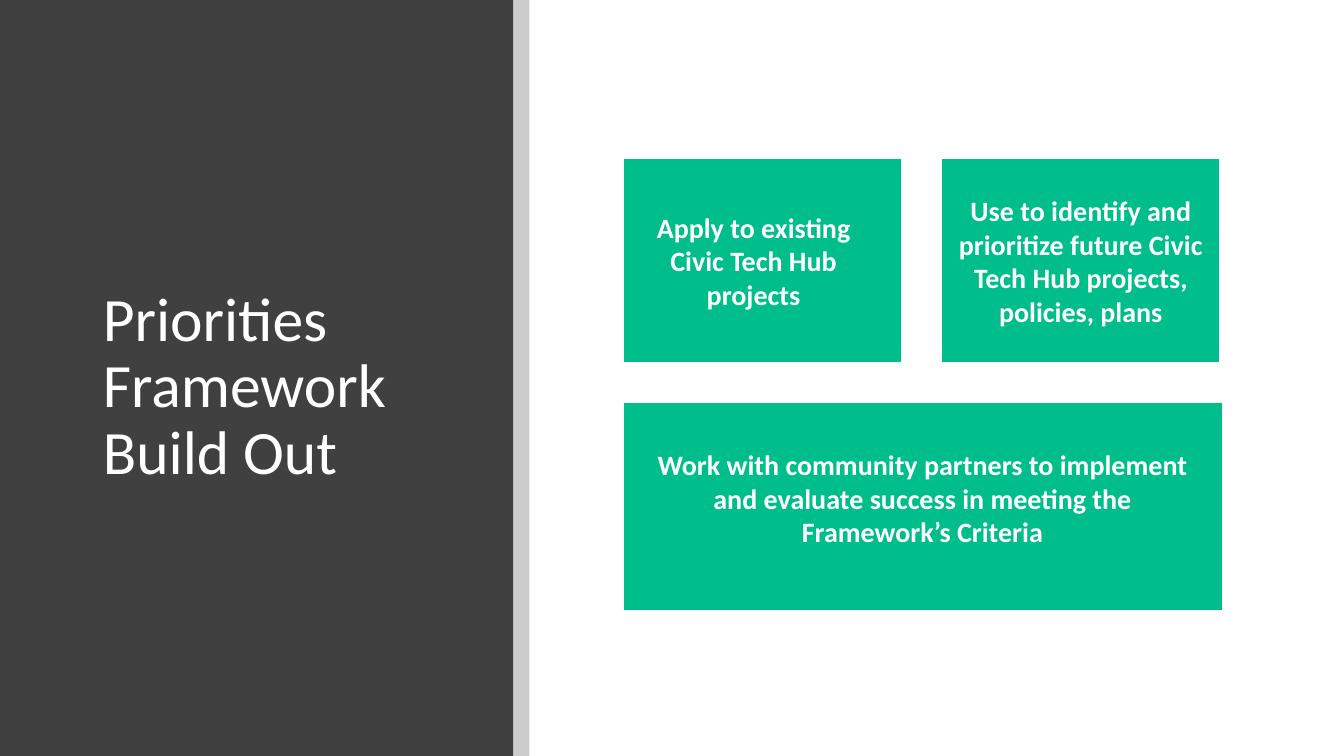
from dataclasses import dataclass
from lxml.etree import SubElement
from pptx import Presentation
from pptx.dml.color import RGBColor
from pptx.enum.shapes import MSO_SHAPE
from pptx.enum.text import MSO_ANCHOR, MSO_AUTO_SIZE, PP_ALIGN
from pptx.oxml.ns import qn
from pptx.util import Inches, Pt

TITLE = "Priorities Framework Build Out"
CARDS = [
    {"text": "Apply to existing Civic Tech Hub projects",
     "frame": (6.18, 1.57, 2.77, 2.03), "label": (6.36, 1.91, 2.23, 1.35)},
    {"text": "Work with community partners to implement and evaluate success "
             "in meeting the Framework’s Criteria",
     "frame": (6.18, 3.99, 5.95, 2.07), "label": (6.4, 3.99, 5.5, 1.9)},
    {"text": "Use to identify and prioritize future Civic Tech Hub projects, policies, plans",
     "frame": (9.33, 1.57, 2.77, 2.03), "label": (9.41, 1.79, 2.62, 1.59)},
]
SLIDE_WIDTH, SLIDE_HEIGHT = 13.33, 7.5
PANEL_WIDTH, STRIPE_WIDTH = 5.09, 0.16
TITLE_BOX = (0.92, 0.89, 3.65, 5.91)


@dataclass(frozen=True)
class Theme:
    """Colours, font and type sizes of the slide."""
    font: str = "Calibri"
    panel: RGBColor = RGBColor(0x40, 0x40, 0x40)
    stripe: RGBColor = RGBColor(0, 0, 0)
    stripe_opacity: int = 20
    card: RGBColor = RGBColor(0x00, 0xBE, 0x8C)
    white: RGBColor = RGBColor(0xFF, 0xFF, 0xFF)
    title_size: int = 44
    card_size: int = 20
    border: float = 1.5
    inset: float = 0.08


THEME = Theme()


def set_all(target, values):
    """Set each named attribute on the target."""
    for name, value in values.items():
        setattr(target, name, value)


def add_rectangle(shapes, box, color):
    """Add a plain filled rectangle."""
    shape = shapes.add_shape(MSO_SHAPE.RECTANGLE, *map(Inches, box))
    shape.shadow.inherit = False
    shape.fill.solid()
    shape.fill.fore_color.rgb = color
    shape.line.fill.background()
    return shape


def write_text(shape, text, size, bold, alignment, spacing):
    """Write one formatted paragraph into a shape."""
    set_all(shape.text_frame, {"text": text, "word_wrap": True,
                               "auto_size": MSO_AUTO_SIZE.NONE,
                               "vertical_anchor": MSO_ANCHOR.MIDDLE})
    paragraph = shape.text_frame.paragraphs[0]
    set_all(paragraph, {"alignment": alignment, "line_spacing": spacing})
    font = paragraph.runs[0].font
    set_all(font, {"name": THEME.font, "size": Pt(size), "bold": bold})
    font.color.rgb = THEME.white


def add_panel(slide):
    """Add the dark side panel and its translucent stripe."""
    add_rectangle(slide.shapes, (0, 0, PANEL_WIDTH, SLIDE_HEIGHT), THEME.panel)
    stripe = add_rectangle(slide.shapes, (PANEL_WIDTH, 0, STRIPE_WIDTH, SLIDE_HEIGHT),
                           THEME.stripe)
    color = stripe.element.spPr.find(qn("a:solidFill")).find(qn("a:srgbClr"))
    SubElement(color, qn("a:alpha")).set("val", str(THEME.stripe_opacity * 1000))


def add_title(slide):
    """Place the title in front of the panel."""
    title = slide.shapes.title
    slide.shapes.element.append(title.element)
    set_all(title, dict(zip(("left", "top", "width", "height"), map(Inches, TITLE_BOX))))
    write_text(title, TITLE, THEME.title_size, False, PP_ALIGN.LEFT, 0.9)


def add_card(slide, card):
    """Add a bordered card grouped with its label."""
    group = slide.shapes.add_group_shape()
    frame = add_rectangle(group.shapes, card["frame"], THEME.card)
    frame.line.color.rgb = THEME.white
    frame.line.width = Pt(THEME.border)
    label = group.shapes.add_textbox(*map(Inches, card["label"]))
    sides = ("margin_left", "margin_top", "margin_right", "margin_bottom")
    set_all(label.text_frame, dict.fromkeys(sides, Inches(THEME.inset)))
    write_text(label, card["text"], THEME.card_size, True, PP_ALIGN.CENTER, 1.0)


def main():
    """Build and save the slide."""
    presentation = Presentation()
    set_all(presentation, {"slide_width": Inches(SLIDE_WIDTH),
                           "slide_height": Inches(SLIDE_HEIGHT)})
    slide = presentation.slides.add_slide(presentation.slide_layouts[5])
    add_panel(slide)
    add_title(slide)
    for card in CARDS:
        add_card(slide, card)
    presentation.save("out.pptx")


if __name__ == "__main__":
    main()
